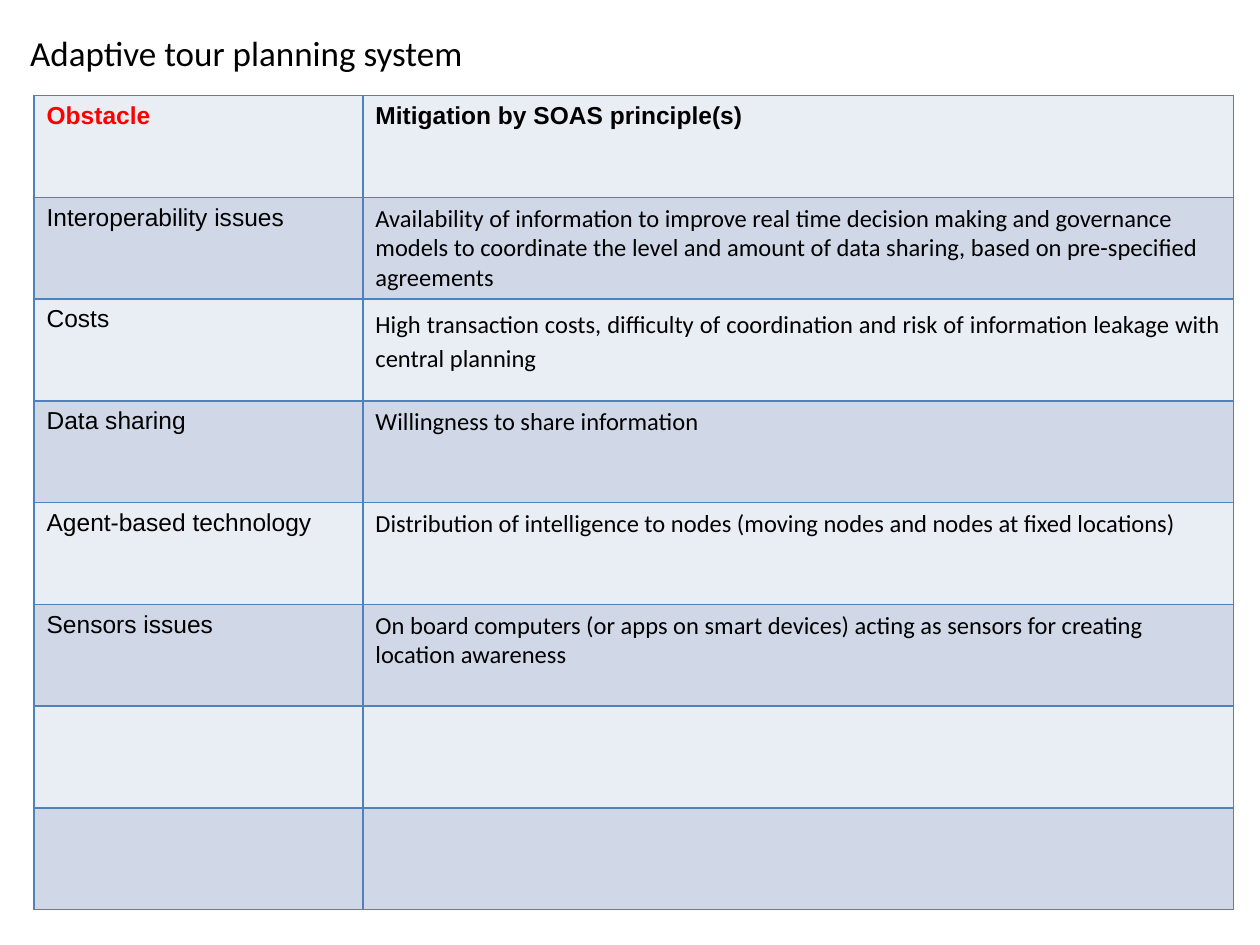
from typing import NamedTuple

from lxml import etree
from pptx import Presentation
from pptx.dml.color import RGBColor
from pptx.enum.text import MSO_ANCHOR, PP_ALIGN
from pptx.oxml.ns import qn
from pptx.util import Inches, Pt

MIDDLE = MSO_ANCHOR.MIDDLE
JUSTIFY = PP_ALIGN.JUSTIFY

SLIDE_WIDTH, SLIDE_HEIGHT = Inches(10), Inches(7.5)
TABLE_LEFT, TABLE_TOP = Inches(0.27), Inches(0.76)
COLUMN_WIDTHS = (Inches(2.61), Inches(6.91))
TABLE_HEIGHT = Inches(6.46)
ROW_COUNT = 8
BAND_FILLS = ("E9EDF4", "D0D8E8")
BORDER_COLOR = "4F81BD"
BORDER_SIDES = ("a:lnL", "a:lnR", "a:lnT", "a:lnB")


class Entry(NamedTuple):
    text: str
    font: str = "Arial"
    color: str = "000000"
    size: int = 14
    bold: bool = False
    line_spacing: float | None = None
    align: PP_ALIGN | None = None


def mitigation(text: str, **style) -> Entry:
    return Entry(text, font="Calibri", **style)


TITLE = Entry("Adaptive tour planning system", font="Calibri", size=20)
ROWS = (
    (
        Entry("Obstacle", color="FF0000", bold=True),
        Entry("Mitigation by SOAS principle(s)", bold=True),
    ),
    (
        Entry("Interoperability issues"),
        mitigation(
            "Availability of information to improve real time decision making and "
            "governance models to coordinate the level and amount of data sharing, "
            "based on pre-specified agreements"
        ),
    ),
    (
        Entry("Costs"),
        mitigation(
            "High transaction costs, difficulty of coordination and risk of "
            "information leakage with central planning",
            line_spacing=1.15,
            align=JUSTIFY,
        ),
    ),
    (Entry("Data sharing"), mitigation("Willingness to share information")),
    (
        Entry("Agent-based technology"),
        mitigation(
            "Distribution of intelligence to nodes (moving nodes and nodes at "
            "fixed locations)"
        ),
    ),
    (
        Entry("Sensors issues"),
        mitigation(
            "On board computers (or apps on smart devices) acting as sensors for "
            "creating location awareness"
        ),
    ),
)


def rgb(hex_color: str) -> RGBColor:
    return RGBColor.from_string(hex_color)


def write(text_frame, entry: Entry) -> None:
    text_frame.text = entry.text
    paragraph = text_frame.paragraphs[0]
    paragraph.alignment = entry.align
    paragraph.line_spacing = entry.line_spacing
    font = paragraph.runs[0].font
    font.name = entry.font
    font.size = Pt(entry.size)
    font.bold = entry.bold
    font.color.rgb = rgb(entry.color)


def style_cell(cell, fill_color: str) -> None:
    cell.fill.solid()
    cell.fill.fore_color.rgb = rgb(fill_color)
    properties = cell._tc.get_or_add_tcPr()
    for position, side in enumerate(BORDER_SIDES):
        border = etree.Element(qn(side), w=str(Pt(1)))
        border_fill = etree.SubElement(border, qn("a:solidFill"))
        etree.SubElement(border_fill, qn("a:srgbClr"), val=BORDER_COLOR)
        properties.insert(position, border)


def add_title(slide) -> None:
    title_box = slide.shapes.add_textbox(
        int(SLIDE_WIDTH * 0.02),
        int(SLIDE_HEIGHT * 0.028),
        int(SLIDE_WIDTH * 0.9),
        int(SLIDE_HEIGHT * 0.056),
    )
    frame = title_box.text_frame
    frame.word_wrap = True
    frame.vertical_anchor = MIDDLE
    frame.margin_left = frame.margin_right = Inches(0.04)
    frame.margin_top = frame.margin_bottom = Inches(0.04)
    write(frame, TITLE)


def add_obstacle_table(slide) -> None:
    table = slide.shapes.add_table(
        ROW_COUNT,
        len(COLUMN_WIDTHS),
        TABLE_LEFT,
        TABLE_TOP,
        sum(COLUMN_WIDTHS),
        TABLE_HEIGHT,
    ).table
    table.first_row = table.horz_banding = False
    for column, width in zip(table.columns, COLUMN_WIDTHS):
        column.width = width
    for row_index, row in enumerate(table.rows):
        for cell in row.cells:
            style_cell(cell, BAND_FILLS[row_index % len(BAND_FILLS)])
    for row, entries in zip(table.rows, ROWS):
        for cell, entry in zip(row.cells, entries):
            write(cell.text_frame, entry)


def main() -> None:
    presentation = Presentation()
    presentation.slide_width = SLIDE_WIDTH
    presentation.slide_height = SLIDE_HEIGHT
    slide = presentation.slides.add_slide(presentation.slide_layouts[6])
    add_title(slide)
    add_obstacle_table(slide)
    presentation.save("out.pptx")


if __name__ == "__main__":
    main()
